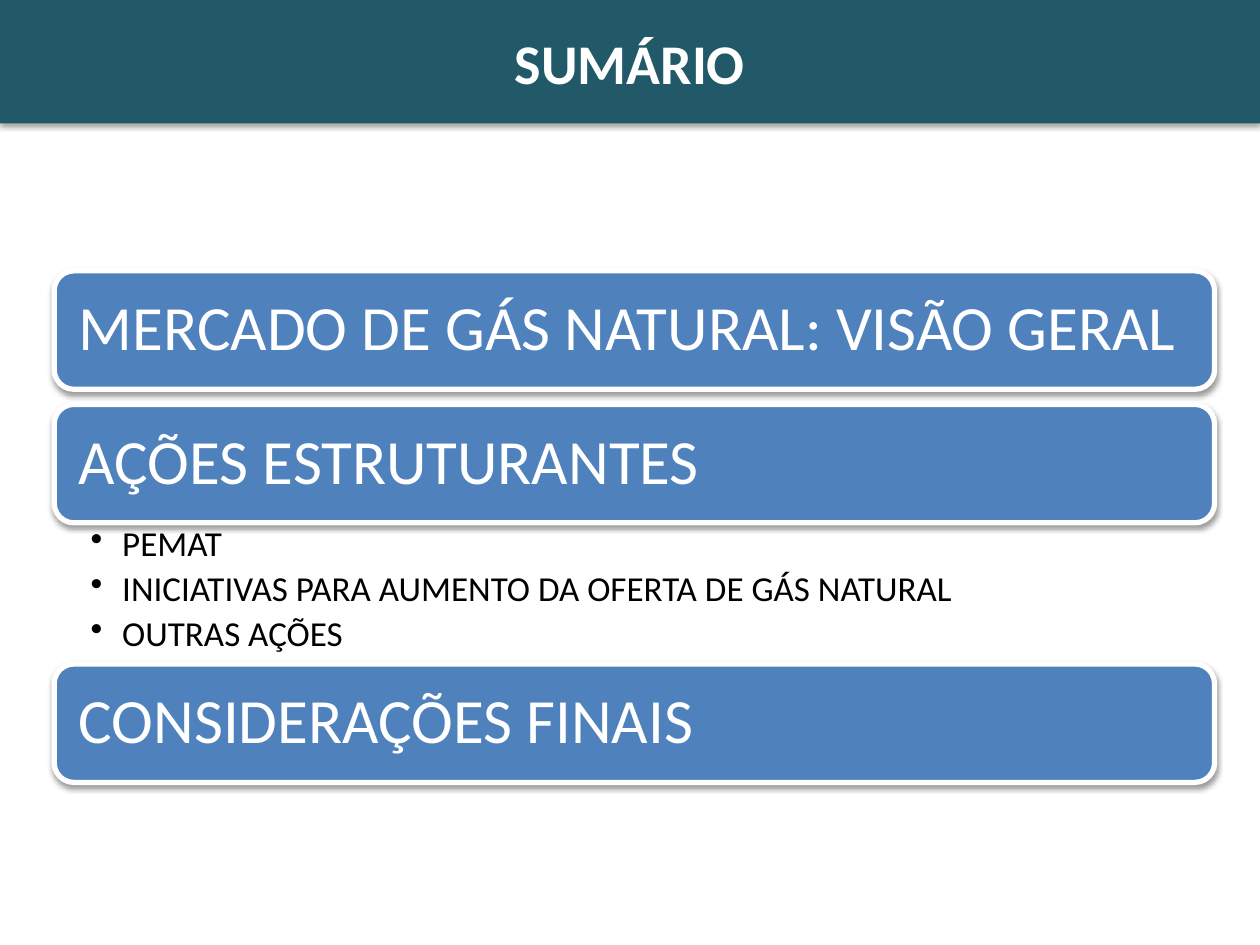
from dataclasses import dataclass

from lxml import etree
from pptx import Presentation
from pptx import util as u
from pptx.dml.color import RGBColor
from pptx.enum import shapes, text
from pptx.oxml.ns import qn

WHITE, BLACK, TEAL, BLUE = "FFFFFF", "000000", "215968", "4F81BD"
LEFT, WIDTH, BAR_HEIGHT = 0.43, 9.21, 0.94


@dataclass
class Section:
    title: str
    top: float


SECTIONS = [
    Section("MERCADO DE GÁS NATURAL: VISÃO GERAL", 2.15),
    Section("AÇÕES ESTRUTURANTES", 3.21),
    Section("CONSIDERAÇÕES FINAIS", 5.27),
]
ACTIONS = [
    "PEMAT",
    "INICIATIVAS PARA AUMENTO DA OFERTA DE GÁS NATURAL",
    "OUTRAS AÇÕES",
]


def color(value: str) -> RGBColor:
    return RGBColor.from_string(value)


def add_shadow(s, distance: float, opacity: int) -> None:
    """Cast a soft black shadow straight down."""
    s.shadow.inherit = False
    effects = s._element.spPr.find(qn("a:effectLst"))
    shadow = etree.SubElement(
        effects, qn("a:outerShdw"), blurRad=str(u.Pt(3.1)),
        dist=str(u.Pt(distance)), dir="5400000", rotWithShape="0")
    black = etree.SubElement(shadow, qn("a:srgbClr"), val=BLACK)
    etree.SubElement(black, qn("a:alpha"), val=str(opacity * 1000))


def add_box(slide, kind, left: float, top: float, width: float,
            height: float, fill: str):
    s = slide.shapes.add_shape(
        kind, u.Inches(left), u.Inches(top), u.Inches(width), u.Inches(height))
    s.fill.solid()
    s.fill.fore_color.rgb = color(fill)
    s.line.fill.background()
    return s


def set_margins(tf, left: float, top: float, right: float,
                bottom: float) -> None:
    tf.margin_left, tf.margin_top = u.Inches(left), u.Inches(top)
    tf.margin_right, tf.margin_bottom = u.Inches(right), u.Inches(bottom)


def write(p, words: str, *, size: int, ink: str = WHITE, bold: bool = False,
          align=text.PP_ALIGN.LEFT, spacing: float = 1.0,
          after: int = 0, bullet: bool = False) -> None:
    p.alignment = align
    p.line_spacing = spacing
    p.space_after = u.Pt(after)
    if bullet:
        pPr = p._p.get_or_add_pPr()
        pPr.set("marL", str(u.Inches(0.25)))
        pPr.set("indent", str(u.Inches(-0.25)))
        etree.SubElement(pPr, qn("a:buChar"), char="•")
    r = p.add_run()
    r.text = words
    r.font.name, r.font.size, r.font.bold = "Calibri", u.Pt(size), bold
    r.font.color.rgb = color(ink)


def add_section(slide, section: Section) -> None:
    s = add_box(slide, shapes.MSO_SHAPE.ROUNDED_RECTANGLE,
                LEFT, section.top, WIDTH, BAR_HEIGHT, BLUE)
    s.line.color.rgb = color(WHITE)
    s.line.width = u.Pt(3)
    add_shadow(s, 1.6, 38)
    tf = s.text_frame
    tf.word_wrap = True
    tf.vertical_anchor = text.MSO_ANCHOR.MIDDLE
    set_margins(tf, 0.15, 0.15, 0.15, 0.15)
    write(tf.paragraphs[0], section.title, size=36, spacing=0.9)


def add_bullets(slide, items: list[str], top: float, height: float) -> None:
    s = slide.shapes.add_textbox(
        u.Inches(LEFT), u.Inches(top), u.Inches(WIDTH), u.Inches(height))
    tf = s.text_frame
    tf.word_wrap = True
    set_margins(tf, 0.29, 0.03, 0.16, 0.03)
    for i, item in enumerate(items):
        p = tf.add_paragraph() if i else tf.paragraphs[0]
        write(p, item, size=20, ink=BLACK, spacing=0.9, after=4, bullet=True)


def main() -> None:
    prs = Presentation()
    prs.slide_width, prs.slide_height = u.Inches(10), u.Inches(7.5)
    slide = prs.slides.add_slide(prs.slide_layouts[6])

    # Title band
    band = add_box(slide, shapes.MSO_SHAPE.RECTANGLE, 0, 0, 10, 0.98, TEAL)
    add_shadow(band, 1.8, 35)
    band.text_frame.vertical_anchor = text.MSO_ANCHOR.MIDDLE
    write(band.text_frame.paragraphs[0], "SUMÁRIO", size=32, bold=True,
          align=text.PP_ALIGN.CENTER)

    # Section bars
    for section in SECTIONS:
        add_section(slide, section)

    # Bullets fill the gap between the last two bars
    top = SECTIONS[1].top + BAR_HEIGHT
    add_bullets(slide, ACTIONS, top, SECTIONS[2].top - top)

    prs.save("out.pptx")


if __name__ == "__main__":
    main()
